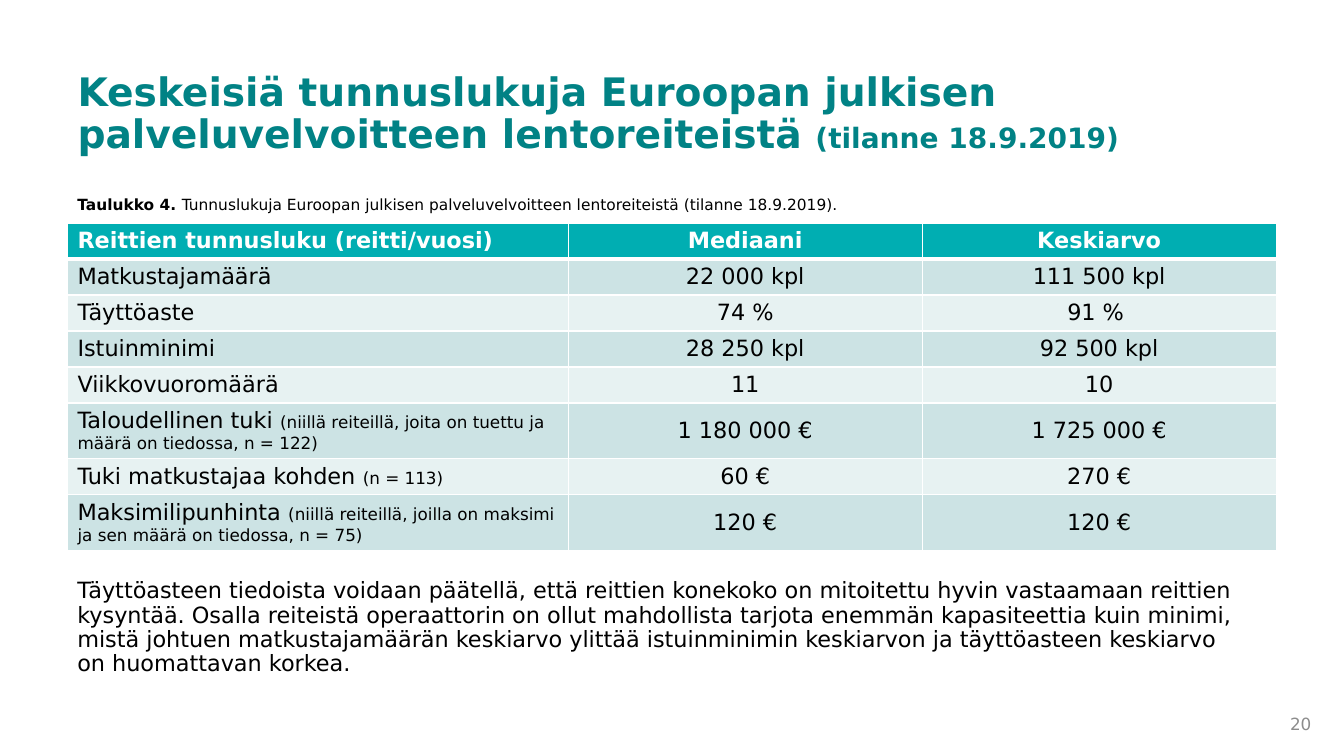
"""Build the slide on key figures of European public service obligation air routes."""
from lxml import etree
from pptx import Presentation
from pptx.dml.color import RGBColor
from pptx.enum import text as t
from pptx.oxml import ns
from pptx.util import Cm, Pt

FONT = "DejaVu Sans"
TEAL, HEADER, WHITE, BLACK, GREY = "018285", "00AEB2", "FFFFFF", "000000", "8C8C8C"
BANDS = ["CCE3E4", "E7F2F2"]

TITLE = [("Keskeisiä tunnuslukuja Euroopan julkisen palveluvelvoitteen lentoreiteistä ", 28, True),
         ("(tilanne 18.9.2019)", 20, True)]
CAPTION = [("Taulukko 4. ", 11, True),
           ("Tunnuslukuja Euroopan julkisen palveluvelvoitteen lentoreiteistä (tilanne 18.9.2019).", 11, False)]
CONCLUSION = [("Täyttöasteen tiedoista voidaan päätellä, että reittien konekoko on mitoitettu hyvin "
               "vastaamaan reittien kysyntää. Osalla reiteistä operaattorin on ollut mahdollista tarjota "
               "enemmän kapasiteettia kuin minimi, mistä johtuen matkustajamäärän keskiarvo ylittää "
               "istuinminimin keskiarvon ja täyttöasteen keskiarvo on huomattavan korkea.", 16, False)]
PAGE_NUMBER = [("20", 12, False)]
KEY_FIGURES = [
    ("Reittien tunnusluku (reitti/vuosi)", "", "Mediaani", "Keskiarvo"),
    ("Matkustajamäärä", "", "22 000 kpl", "111 500 kpl"),
    ("Täyttöaste", "", "74 %", "91 % "),
    ("Istuinminimi", "", "28 250 kpl", "92 500 kpl"),
    ("Viikkovuoromäärä", "", "11", "10"),
    ("Taloudellinen tuki ", "(niillä reiteillä, joita on tuettu ja määrä on tiedossa, n = 122)",
     "1 180 000 €", "1 725 000 €"),
    ("Tuki matkustajaa kohden ", "(n = 113)", "60 €", "270 €"),
    ("Maksimilipunhinta ", "(niillä reiteillä, joilla on maksimi ja sen määrä on tiedossa, n = 75)",
     "120 €", "120 €"),
]
COLUMN_WIDTHS = [12.62, 8.92, 8.92]
ROW_HEIGHT, TALL_ROW_HEIGHT, LONG_NOTE = 0.87, 1.35, 20
LEFT, TEXT_WIDTH = 1.7, 29.85


def rgb(color):
    return RGBColor.from_string(color)


def write(frame, runs, color, align=t.PP_ALIGN.LEFT, spacing=None):
    paragraph = frame.paragraphs[0]
    paragraph.alignment = align
    if spacing:
        paragraph.line_spacing = spacing
    for words, size, bold in runs:
        run = paragraph.add_run()
        run.text = words
        run.font.name, run.font.size, run.font.bold = FONT, Pt(size), bold
        run.font.color.rgb = rgb(color)


def set_frame(frame, anchor):
    frame.word_wrap = True
    frame.auto_size = t.MSO_AUTO_SIZE.NONE
    frame.vertical_anchor = anchor


def add_text(slide, box, runs, color, anchor=t.MSO_ANCHOR.TOP, **layout):
    frame = slide.shapes.add_textbox(*map(Cm, box)).text_frame
    set_frame(frame, anchor)
    write(frame, runs, color, **layout)


def add_borders(cell, widths):
    properties = cell._tc.get_or_add_tcPr()
    for position, (side, width) in enumerate(widths.items()):
        line = etree.Element(ns.qn(f"a:ln{side}"), w=str(Pt(width)))
        fill = etree.SubElement(line, ns.qn("a:solidFill"))
        etree.SubElement(fill, ns.qn("a:srgbClr"), val=WHITE)
        properties.insert(position, line)


def add_key_figures(slide):
    heights = [TALL_ROW_HEIGHT if len(row[1]) > LONG_NOTE else ROW_HEIGHT for row in KEY_FIGURES]
    box = (LEFT, 5.62, sum(COLUMN_WIDTHS), sum(heights))
    table = slide.shapes.add_table(len(heights), len(COLUMN_WIDTHS), *map(Cm, box)).table
    for column, width in zip(table.columns, COLUMN_WIDTHS):
        column.width = Cm(width)
    for r, (label, note, median, mean) in enumerate(KEY_FIGURES):
        table.rows[r].height = Cm(heights[r])
        is_header = r == 0
        label_runs = [(label, 16, is_header)] + ([(note, 12, False)] if note else [])
        cells = [label_runs, [(median, 16, is_header)], [(mean, 16, is_header)]]
        for c, runs in enumerate(cells):
            cell = table.cell(r, c)
            cell.vertical_anchor = t.MSO_ANCHOR.MIDDLE
            cell.fill.solid()
            cell.fill.fore_color.rgb = rgb(HEADER if is_header else BANDS[(r - 1) % 2])
            add_borders(cell, {"L": 1, "R": 1, "T": 3 if r == 1 else 1, "B": 3 if is_header else 1})
            write(cell.text_frame, runs, WHITE if is_header else BLACK,
                  t.PP_ALIGN.CENTER if c else t.PP_ALIGN.LEFT)


def main():
    deck = Presentation()
    deck.slide_width, deck.slide_height = Cm(33.87), Cm(19.05)
    slide = deck.slides.add_slide(deck.slide_layouts[5])
    title = slide.shapes.title
    title.left, title.top, title.width, title.height = map(Cm, (LEFT, 1.7, TEXT_WIDTH, 3.07))
    set_frame(title.text_frame, t.MSO_ANCHOR.TOP)
    write(title.text_frame, TITLE, TEAL, spacing=0.9)
    add_text(slide, (LEFT, 14.48, TEXT_WIDTH, 3.02), CONCLUSION, BLACK, spacing=0.9)
    add_text(slide, (31.39, 17.88, 1.91, 0.71), PAGE_NUMBER, GREY,
             anchor=t.MSO_ANCHOR.MIDDLE, align=t.PP_ALIGN.RIGHT)
    add_key_figures(slide)
    add_text(slide, (LEFT, 4.78, 31.6, 0.74), CAPTION, BLACK)
    deck.save("out.pptx")


if __name__ == "__main__":
    main()
